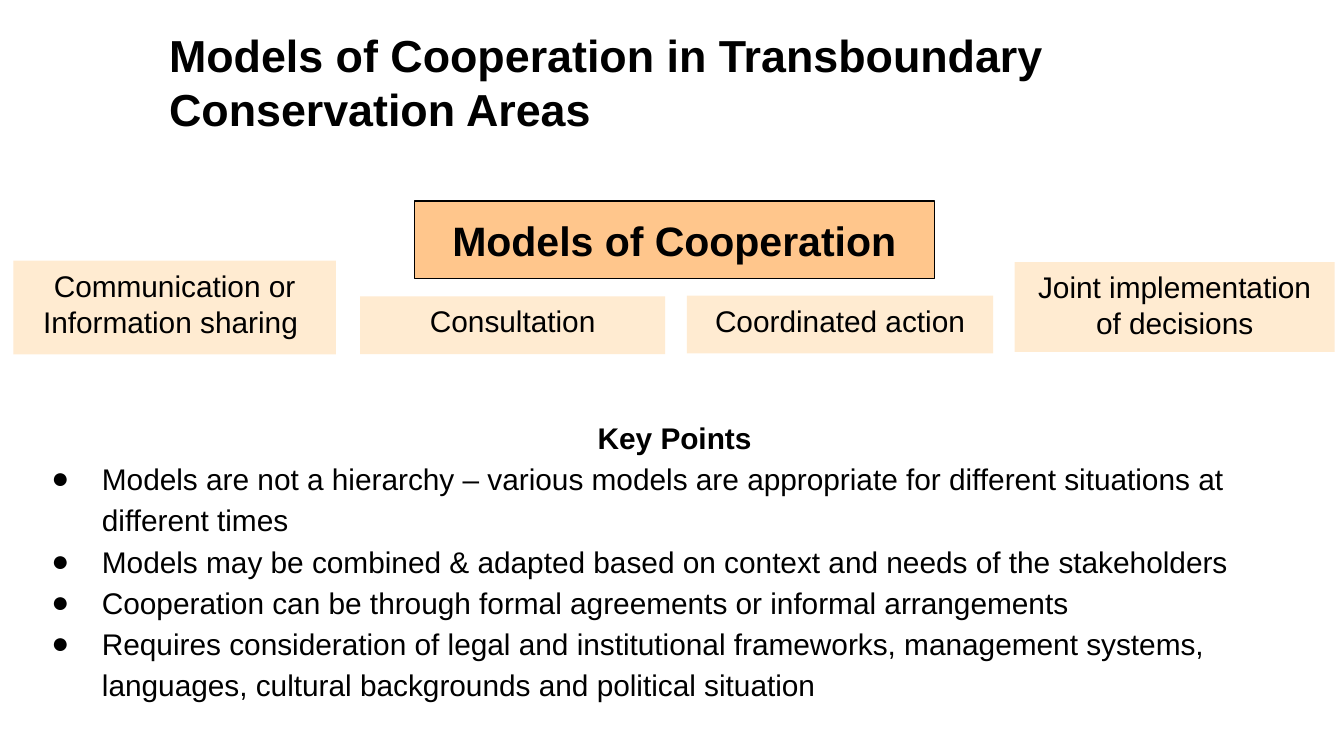
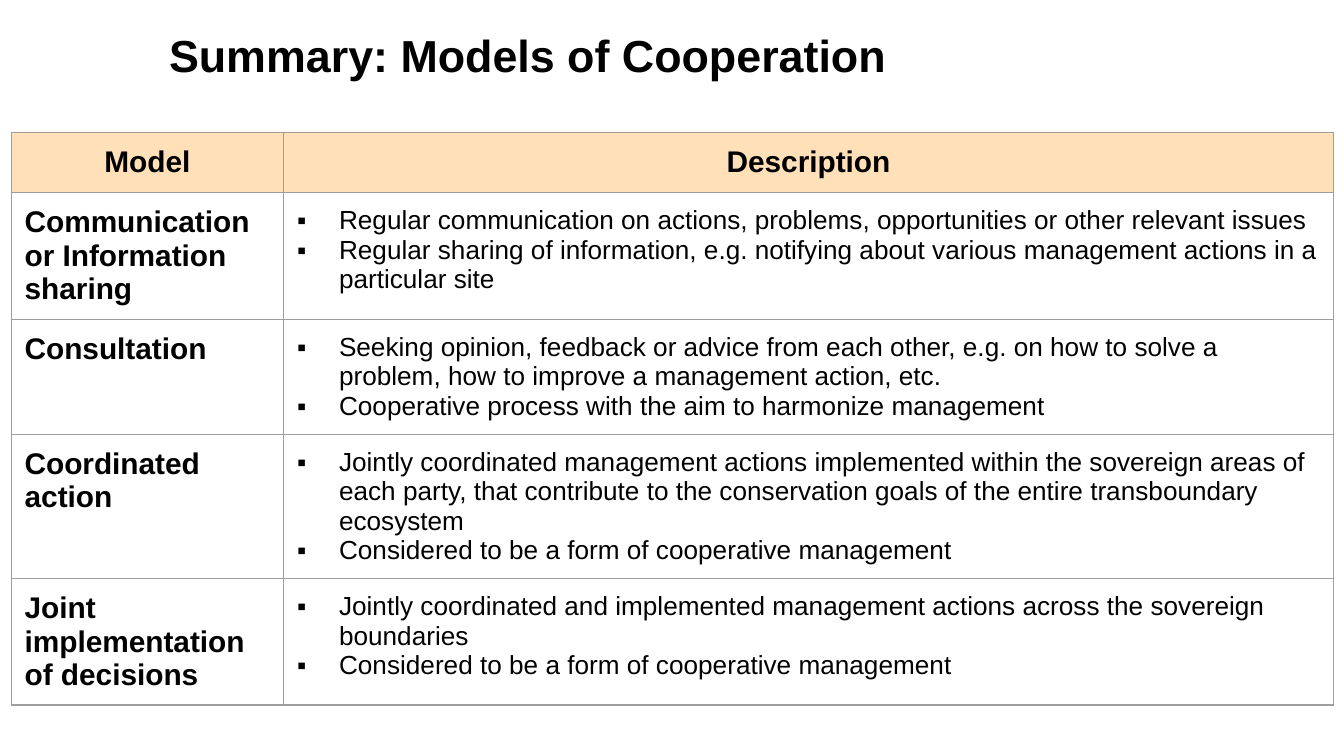
from dataclasses import dataclass

from pptx import Presentation
from pptx.dml.color import RGBColor as RGB
from pptx.enum.shapes import MSO_SHAPE as SHAPE
from pptx.enum.text import MSO_ANCHOR as ANCHOR, PP_ALIGN as ALIGN
from pptx.oxml.ns import qn
from pptx.util import Pt
from lxml.etree import SubElement


@dataclass(frozen=True)
class Theme:
    font: str = "Arial"
    ink: str = "000000"
    paper: str = "FFFFFF"
    banner: str = "FFC386"
    chip: str = "FFE9CC"
    head: str = "FFDBAB"
    grid: str = "9E9E9E"
    title: float = 24
    banner_size: float = 22
    body: float = 16
    detail: float = 14


T = Theme()

MODELS = [
    "Communication or Information sharing ",
    "Consultation",
    "Coordinated action",
    "Joint implementation of decisions",
]
# left, top, width, height of each model's box
CHIP_BOXES = [
    (7.2, 139.7, 172.8, 50.2),
    (193, 158.8, 163.4, 31),
    (367.9, 158.4, 164.2, 31),
    (543.6, 140.4, 171.4, 48.2),
]
KEY_POINTS = [
    "Models are not a hierarchy – various models are appropriate for different situations at different times",
    "Models may be combined & adapted based on context and needs of the stakeholders",
    "Cooperation can be through formal agreements or informal arrangements",
    "Requires consideration of legal and institutional frameworks, management systems, "
    "languages, cultural backgrounds and political situation",
]
COOPERATIVE = "Considered to be a form of cooperative management"
DESCRIPTIONS = [
    ["Regular communication on actions, problems, opportunities or other relevant issues",
     "Regular sharing of information, e.g. notifying about various management actions in a particular site"],
    ["Seeking opinion, feedback or advice from each other, e.g. on how to solve a problem, "
     "how to improve a management action, etc.",
     "Cooperative process with the aim to harmonize management"],
    ["Jointly coordinated management actions implemented within the sovereign areas of each party, "
     "that contribute to the conservation goals of the entire transboundary ecosystem",
     COOPERATIVE],
    ["Jointly coordinated and implemented management actions across the sovereign boundaries",
     COOPERATIVE],
]


def set_fill(fill, color, opacity):
    fill.solid()
    fill.fore_color.rgb = RGB.from_string(color)
    solid = fill._xPr.find(qn("a:solidFill"))
    SubElement(solid[0], qn("a:alpha"), val=str(opacity * 1000))


def add_text(tf, text, size=T.body, bold=False, align=ALIGN.LEFT,
             bullet=None, indent=0, spacing=None):
    """Write one paragraph, using the empty first one if it is free."""
    p = tf.paragraphs[0]
    if p.runs:
        p = tf.add_paragraph()
    p.alignment = align
    if spacing:
        p.line_spacing = spacing
    if bullet:
        margin, hang = indent
        pPr = p._p.get_or_add_pPr()
        pPr.set("marL", str(Pt(margin)))
        pPr.set("indent", str(-Pt(hang)))
        color = SubElement(pPr, qn("a:buClr"))
        SubElement(color, qn("a:srgbClr"), val=T.ink)
        SubElement(pPr, qn("a:buFont"), typeface=T.font)
        SubElement(pPr, qn("a:buChar"), char=bullet)
    r = p.add_run()
    r.text = text
    r.font.name, r.font.size, r.font.bold = T.font, Pt(size), bold
    r.font.color.rgb = RGB.from_string(T.ink)


def add_box(slide, box, color, opacity, anchor=ANCHOR.TOP, line=None, inset=3.6):
    """Add a tinted rectangle and return its text frame."""
    sp = slide.shapes.add_shape(SHAPE.RECTANGLE, *map(Pt, box))
    sp.shadow.inherit = False
    set_fill(sp.fill, color, opacity)
    if line:
        sp.line.color.rgb = RGB.from_string(line)
        sp.line.width = Pt(0.75)
    else:
        sp.line.fill.background()
    tf = sp.text_frame
    tf.word_wrap = True
    tf.vertical_anchor = anchor
    tf.margin_left = tf.margin_right = Pt(7.2)
    tf.margin_top = tf.margin_bottom = Pt(inset)
    return tf


def add_title(slide, text, height):
    tf = add_box(slide, (83.5, 10.1, 636.5, height), T.paper, 55, inset=5)
    add_text(tf, text, size=T.title, bold=True)


def add_models(slide, banner_box):
    for text, box in zip(MODELS, CHIP_BOXES):
        add_text(add_box(slide, box, T.chip, 90), text, align=ALIGN.CENTER)
    tf = add_box(slide, banner_box, T.banner, 95, ANCHOR.MIDDLE, line=T.ink)
    add_text(tf, "Models of Cooperation", size=T.banner_size, bold=True, align=ALIGN.CENTER)


def add_key_points(slide, box):
    tf = add_box(slide, box, T.paper, 79, ANCHOR.MIDDLE)
    add_text(tf, "Key Points", bold=True, align=ALIGN.CENTER, spacing=1.15)
    for point in KEY_POINTS:
        add_text(tf, point, bullet="●", indent=(36, 27), spacing=1.15)


def style_cell(cell, color, opacity):
    cell.margin_left = cell.margin_right = Pt(7.2)
    cell.margin_top = cell.margin_bottom = Pt(7.2)
    tcPr = cell._tc.get_or_add_tcPr()
    for side in ("lnL", "lnR", "lnT", "lnB"):
        ln = SubElement(tcPr, qn("a:" + side), w=str(Pt(0.75)))
        SubElement(SubElement(ln, qn("a:solidFill")), qn("a:srgbClr"), val=T.grid)
    set_fill(cell.fill, color, opacity)


def add_summary_table(slide, box, col_widths, row_heights):
    frame = slide.shapes.add_table(len(row_heights), len(col_widths), *map(Pt, box))
    table = frame.table
    table.first_row = table.horz_banding = False
    for col, width in zip(table.columns, col_widths):
        col.width = Pt(width)
    for row, height in zip(table.rows, row_heights):
        row.height = Pt(height)

    # Header row
    for cell, text in zip(table.rows[0].cells, ("Model", "Description")):
        style_cell(cell, T.head, 84)
        add_text(cell.text_frame, text, bold=True, align=ALIGN.CENTER)

    # One row per model
    for i, (model, points) in enumerate(zip(MODELS, DESCRIPTIONS), start=1):
        name, description = table.cell(i, 0), table.cell(i, 1)
        for cell in (name, description):
            style_cell(cell, T.paper, 85)
        add_text(name.text_frame, model.strip(), bold=True)
        for point in points:
            add_text(description.text_frame, point, size=T.detail,
                     bullet="▪", indent=(22.5, 22.5))


def models_slide(slide):
    add_title(slide, "Models of Cooperation in Transboundary Conservation Areas", 65.5)
    add_models(slide, (222, 107.8, 278.6, 41.5))
    add_key_points(slide, (11.5, 202.3, 699.8, 193.7))


def summary_slide(slide):
    add_summary_table(slide, (6, 71, 708.4, 306), (145.9, 562.5), (31.8, 67.8, 61.5, 77.2, 67.7))
    add_title(slide, "Summary: Models of Cooperation", 36)


def main():
    prs = Presentation()
    prs.slide_width, prs.slide_height = Pt(720), Pt(405)
    for build in (models_slide, summary_slide):
        build(prs.slides.add_slide(prs.slide_layouts[6]))
    prs.save("out.pptx")


if __name__ == "__main__":
    main()
